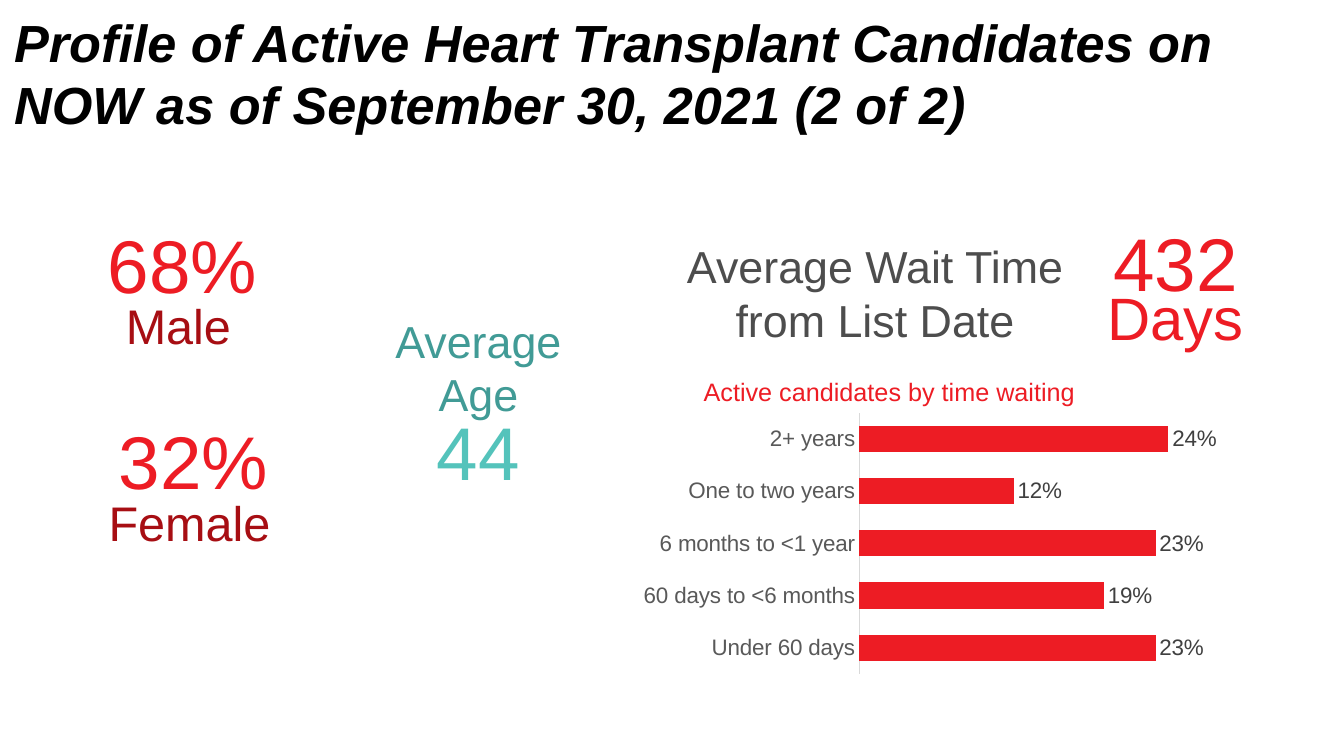
from pptx import Presentation
from pptx.chart.data import CategoryChartData
from pptx.dml.color import RGBColor
from pptx.enum.chart import XL_CHART_TYPE, XL_LABEL_POSITION, XL_TICK_MARK
from pptx.enum.text import PP_ALIGN
from pptx.util import Inches, Pt

FONT = "Arial"
BLACK = RGBColor(0x00, 0x00, 0x00)
RED = RGBColor(0xED, 0x1C, 0x24)
DARK_RED = RGBColor(0xA7, 0x0E, 0x13)
TEAL = RGBColor(0x41, 0x9B, 0x96)
LIGHT_TEAL = RGBColor(0x54, 0xC3, 0xBB)
HEADING_GRAY = RGBColor(0x4D, 0x4D, 0x4D)
CATEGORY_GRAY = RGBColor(0x59, 0x59, 0x59)
VALUE_GRAY = RGBColor(0x40, 0x40, 0x40)
AXIS_GRAY = RGBColor(0xD9, 0xD9, 0xD9)

WAITING_SHARES = {
    "Under 60 days": 0.23,
    "60 days to <6 months": 0.19,
    "6 months to <1 year": 0.23,
    "One to two years": 0.12,
    "2+ years": 0.24,
}


def style_font(font, size, color):
    font.name = FONT
    font.size = Pt(size)
    font.color.rgb = color


def add_title(slide, wording):
    title = slide.shapes.add_textbox(Inches(0.14), Inches(0.1), Inches(12.81), Inches(1))
    frame = title.text_frame
    frame.word_wrap = True
    frame.margin_left = frame.margin_right = frame.margin_top = frame.margin_bottom = 0
    run = frame.paragraphs[0].add_run()
    run.text = wording
    style_font(run.font, 37.3, BLACK)
    run.font.bold = run.font.italic = True


def add_centered_text(slide, lines, left, top, width, height, size, color):
    label = slide.shapes.add_textbox(Inches(left), Inches(top), Inches(width), Inches(height))
    frame = label.text_frame
    frame.word_wrap = True
    for index, line in enumerate(lines):
        paragraph = frame.add_paragraph() if index else frame.paragraphs[0]
        paragraph.alignment = PP_ALIGN.CENTER
        run = paragraph.add_run()
        run.text = line
        style_font(run.font, size, color)


def add_big_number(slide, number, left, top, width, color):
    add_centered_text(slide, [number], left, top, width, 1, 53.3, color)


def add_gender_share(slide, share, gender, left, top):
    add_big_number(slide, share, left, top, 2.56, RED)
    add_centered_text(slide, [gender], left - 0.04, top + 0.77, 2.56, 0.68, 34.7, DARK_RED)


def add_waiting_chart(slide):
    waiting = CategoryChartData(number_format="0%")
    waiting.categories = list(WAITING_SHARES)
    waiting.add_series("Series 1", list(WAITING_SHARES.values()))
    chart = slide.shapes.add_chart(
        XL_CHART_TYPE.BAR_CLUSTERED,
        Inches(6.26), Inches(4.04), Inches(6.22), Inches(2.7), waiting,
    ).chart
    chart.has_legend = False
    chart.has_title = False
    style_font(chart.font, 16, BLACK)

    shares_axis = chart.value_axis
    shares_axis.minimum_scale = 0
    shares_axis.maximum_scale = 0.3
    shares_axis.has_major_gridlines = False
    shares_axis.visible = False

    periods_axis = chart.category_axis
    periods_axis.major_tick_mark = XL_TICK_MARK.NONE
    periods_axis.format.line.color.rgb = AXIS_GRAY
    periods_axis.format.line.width = Pt(0.75)
    style_font(periods_axis.tick_labels.font, 16, CATEGORY_GRAY)

    plot = chart.plots[0]
    plot.gap_width = 100
    plot.vary_by_categories = False
    bars = plot.series[0]
    bars.format.fill.solid()
    bars.format.fill.fore_color.rgb = RED
    percentages = bars.data_labels
    percentages.show_value = True
    percentages.number_format = "0%"
    percentages.number_format_is_linked = False
    percentages.position = XL_LABEL_POSITION.OUTSIDE_END
    style_font(percentages.font, 16, VALUE_GRAY)


def main():
    presentation = Presentation()
    presentation.slide_width = Inches(13.33)
    presentation.slide_height = Inches(7.5)
    slide = presentation.slides.add_slide(presentation.slide_layouts[6])

    add_waiting_chart(slide)
    add_title(slide, "Profile of Active Heart Transplant Candidates on NOW as of September 30, 2021 (2 of 2)")
    add_centered_text(slide, ["Average Wait Time", "from List Date"], 6.54, 2.32, 4.28, 1.18, 32, HEADING_GRAY)
    add_big_number(slide, "432", 10.38, 2.1, 2.56, RED)
    add_centered_text(slide, ["Days"], 10.38, 2.74, 2.56, 0.82, 42.7, RED)
    add_centered_text(slide, ["Average", "Age"], 2.95, 3.06, 3.59, 1.18, 32, TEAL)
    add_big_number(slide, "44", 2.95, 3.98, 3.59, LIGHT_TEAL)
    add_gender_share(slide, "32%", "Female", 0.64, 4.07)
    add_centered_text(slide, ["Active candidates by time waiting"], 6.68, 3.68, 4.28, 0.4, 18, RED)
    add_gender_share(slide, "68%", "Male", 0.53, 2.12)

    presentation.save("out.pptx")


if __name__ == "__main__":
    main()
